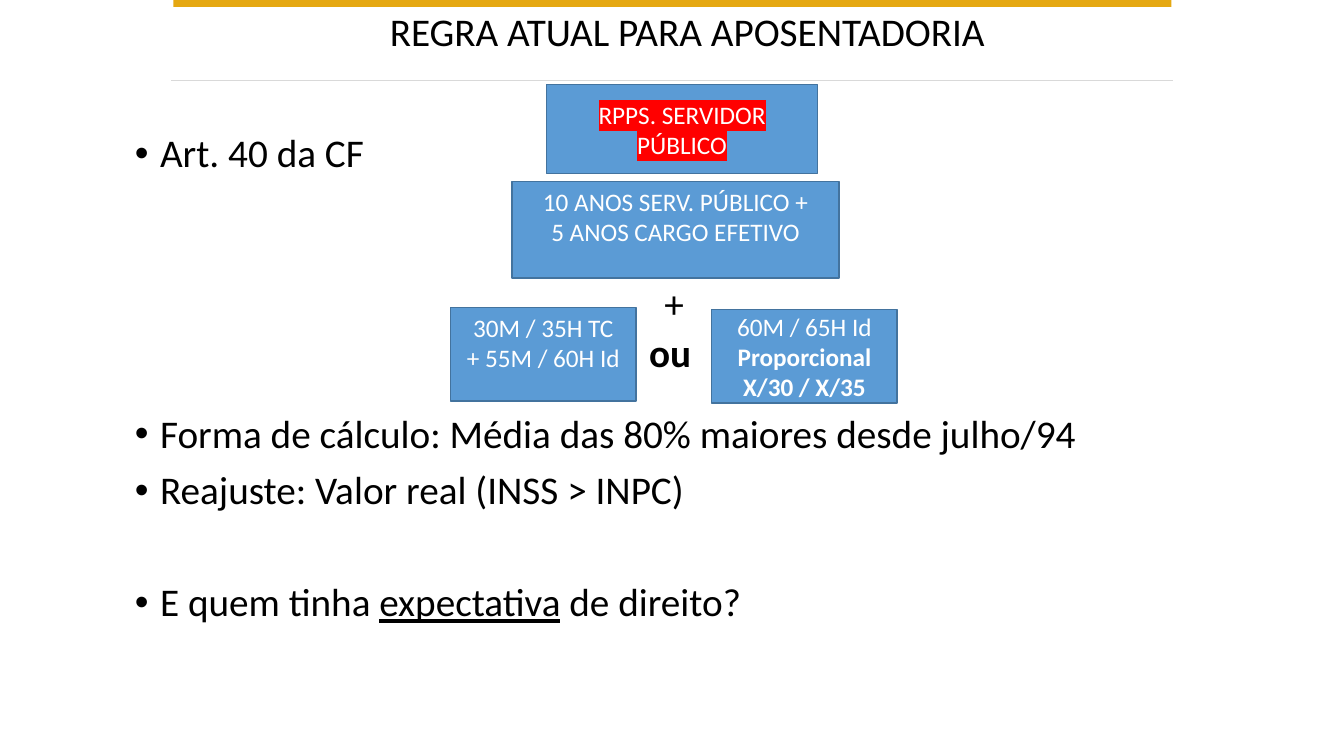
from dataclasses import dataclass

from lxml.etree import SubElement
from pptx import Presentation
from pptx.dml.color import RGBColor
from pptx.enum.shapes import MSO_CONNECTOR, MSO_SHAPE
from pptx.enum.text import MSO_ANCHOR, MSO_AUTO_SIZE, PP_ALIGN
from pptx.oxml.ns import qn
from pptx.util import Inches, Pt


@dataclass(frozen=True)
class Theme:
    font: str = "Calibri"
    ink: str = "000000"
    paper: str = "FFFFFF"
    gold: str = "E5A812"
    rule: str = "D9D9D9"
    box: str = "5B9BD5"
    edge: str = "43739E"
    mark: str = "FF0000"
    large: int = 28
    small: int = 18


T = Theme()
W, H = Inches(13.33), Inches(7.5)


def rgb(value):
    return RGBColor.from_string(value)


def area(x, y, w, h):
    """Turn percentages of the slide's width and height into lengths."""
    return [round(side * share / 100) for side, share in zip((W, H, W, H), (x, y, w, h))]


def add_run(p, text, size=T.large, color=T.ink, bold=False, underline=False, highlight=None):
    r = p.add_run()
    r.text = text
    f = r.font
    f.size, f.bold, f.underline = Pt(size), bold, underline
    f.color.rgb = rgb(color)
    if highlight:
        mark = SubElement(r.font._element, qn("a:highlight"))
        SubElement(mark, qn("a:srgbClr"), val=highlight)
    f.name = T.font


def add_bullet(p, indent=Inches(0.25)):
    pPr = p._p.get_or_add_pPr()
    pPr.set("marL", str(indent))
    pPr.set("indent", str(-indent))
    SubElement(pPr, qn("a:buFont"), typeface="Arial")
    SubElement(pPr, qn("a:buChar"), char="•")


def add_text(slide, place, wrap=True):
    tf = slide.shapes.add_textbox(*area(*place)).text_frame
    tf.word_wrap = wrap
    tf.auto_size = MSO_AUTO_SIZE.NONE if wrap else MSO_AUTO_SIZE.SHAPE_TO_FIT_TEXT
    return tf


def add_label(slide, place, text, **fmt):
    tf = add_text(slide, place, wrap=False)
    add_run(tf.paragraphs[0], text, **fmt)


def add_rect(slide, place, fill, edge=None):
    sp = slide.shapes.add_shape(MSO_SHAPE.RECTANGLE, *area(*place))
    sp.shadow.inherit = False
    sp.fill.solid()
    sp.fill.fore_color.rgb = rgb(fill)
    if edge:
        sp.line.color.rgb = rgb(edge)
        sp.line.width = Pt(1)
    else:
        sp.line.fill.background()
    return sp


def add_box(slide, place, lines, anchor=MSO_ANCHOR.TOP):
    tf = add_rect(slide, place, T.box, T.edge).text_frame
    tf.word_wrap = True
    tf.vertical_anchor = anchor
    for i, (text, fmt) in enumerate(lines):
        p = tf.add_paragraph() if i else tf.paragraphs[0]
        p.alignment = PP_ALIGN.CENTER
        add_run(p, text, size=T.small, color=T.paper, **fmt)


def add_rule(slide, x1, x2, y):
    left, top, right, _ = area(x1, y, x2, 0)
    line = slide.shapes.add_connector(MSO_CONNECTOR.STRAIGHT, left, top, right, top)
    line.line.color.rgb = rgb(T.rule)
    line.line.width = Pt(0.5)
    SubElement(line._element.spPr, qn("a:effectLst"))


def add_title(slide, place, text):
    p = add_text(slide, place).paragraphs[0]
    p.alignment = PP_ALIGN.CENTER
    p.line_spacing = 0.9
    add_run(p, text)


def add_topics(slide, place, topics):
    tf = add_text(slide, place)
    for i, (gap, runs) in enumerate(topics):
        p = tf.add_paragraph() if i else tf.paragraphs[0]
        add_bullet(p)
        p.line_spacing = 0.9
        p.space_before = Pt(gap)
        for text, fmt in runs:
            add_run(p, text, **fmt)


def main():
    prs = Presentation()
    prs.slide_width, prs.slide_height = W, H
    slide = prs.slides.add_slide(prs.slide_layouts[6])

    # Header
    add_rect(slide, (12.9, 0, 74.27, 0.93), T.gold)
    add_rule(slide, 12.75, 87.25, 10.67)
    add_title(slide, (0.9, 1.07, 100.45, 12.93), "REGRA ATUAL PARA APOSENTADORIA")

    # Topics, with room for the diagram after the first
    add_topics(slide, (9.3, 17.07, 88.6, 78.4), [
        (0, [("Art. 40 da CF", {})]),
        (170, [("Forma de cálculo: Média das 80% maiores desde julho/94", {})]),
        (10, [("Reajuste: Valor real (INSS > INPC)", {})]),
        (50, [("E quem tinha ", {}), ("expectativa", {"underline": True}),
              (" de direito?", {})]),
    ])

    # Requirements common to both paths
    add_box(slide, (40.66, 11.2, 20.18, 11.73),
            [("RPPS. SERVIDOR PÚBLICO", {"highlight": T.mark})], MSO_ANCHOR.MIDDLE)
    add_box(slide, (38.11, 24, 24.31, 12.8),
            [("10 ANOS SERV. PÚBLICO +", {}), ("5 ANOS CARGO EFETIVO", {})])

    # Alternative paths
    add_box(slide, (33.53, 40.67, 13.8, 12.4),
            [("30M / 35H TC", {}), ("+ 55M / 60H Id", {})])
    add_box(slide, (52.96, 40.93, 13.8, 12.4),
            [("60M / 65H Id", {}), ("Proporcional", {"bold": True}),
             ("X/30 / X/35", {"bold": True})], MSO_ANCHOR.MIDDLE)
    add_label(slide, (48.69, 36.27, 3, 7.6), "+")
    add_label(slide, (47.56, 42.8, 4.65, 7.6), "ou", bold=True)

    prs.save("out.pptx")


if __name__ == "__main__":
    main()
